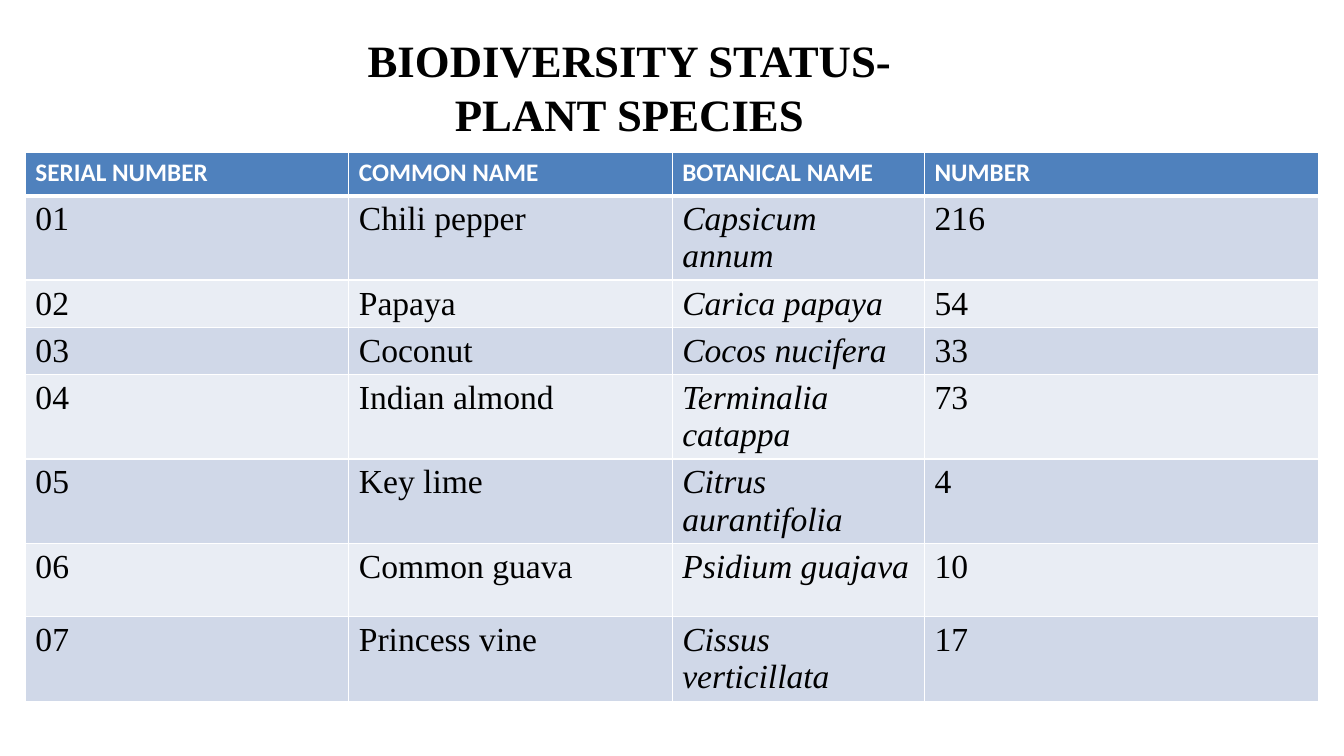
import pptx
import pptx.util
import pptx.dml.color
import pptx.enum.text
import pptx.oxml
import pptx.oxml.ns
from pptx.util import Cm

RGBColor = pptx.dml.color.RGBColor
WHITE = RGBColor(0xFF, 0xFF, 0xFF)
BLACK = RGBColor(0, 0, 0)
BLUE = RGBColor(0x4F, 0x81, 0xBD)
BANDS = (RGBColor(0xD0, 0xD8, 0xE8), RGBColor(0xE9, 0xED, 0xF4))

HEADS = ("SERIAL NUMBER", "COMMON NAME", "BOTANICAL NAME", "NUMBER")
PLANTS = (
    ("Chili pepper", "Capsicum annum", 216),
    ("Papaya", "Carica papaya", 54),
    ("Coconut", "Cocos nucifera", 33),
    ("Indian almond", "Terminalia catappa", 73),
    ("Key lime", "Citrus aurantifolia", 4),
    ("Common guava", "Psidium guajava", 10),
    ("Princess vine", "Cissus verticillata", 17),
)
WIDTHS = (8.15, 8.15, 6.36, 9.93)
HEIGHTS = (1.09, 1.85, 1.09, 1.09, 1.85, 1.85, 1.85, 1.85)
LATIN = 2  # column of botanical names


class Deck:
    serif = "Times New Roman"
    sans = "Calibri"

    def __init__(self):
        self.show = pptx.Presentation()
        self.show.slide_width = Cm(33.87)
        self.show.slide_height = Cm(19.05)
        self.slide = self.show.slides.add_slide(self.show.slide_layouts[5])

    def font(self, par, name, size, color, bold=False, italic=False):
        font = par.font
        font.name, font.size = name, pptx.util.Pt(size)
        font.bold, font.italic = bold, italic
        font.color.rgb = color

    def title(self, text, left, top, width, height):
        box = self.slide.shapes.title
        box.left, box.top = Cm(left), Cm(top)
        box.width, box.height = Cm(width), Cm(height)
        frame = box.text_frame
        frame.text = text
        frame.word_wrap = True
        frame.vertical_anchor = pptx.enum.text.MSO_ANCHOR.MIDDLE
        frame.margin_left = frame.margin_right = 0
        frame.margin_top = frame.margin_bottom = 0
        par = frame.paragraphs[0]
        par.alignment = pptx.enum.text.PP_ALIGN.CENTER
        par.space_before = pptx.util.Pt(1)
        self.font(par, self.serif, 32, BLACK, bold=True)

    def border(self, cell, **sides):
        """Draw white cell edges; sides map L, R, T, B to points."""
        props = cell._tc.get_or_add_tcPr()
        for side, size in sides.items():
            props.append(pptx.oxml.parse_xml(
                f'<a:ln{side} {pptx.oxml.ns.nsdecls("a")} w="{pptx.util.Pt(size)}">'
                f'<a:solidFill><a:srgbClr val="{WHITE}"/></a:solidFill></a:ln{side}>'))

    def table(self, rows, left, top):
        frame = self.slide.shapes.add_table(
            len(rows), len(WIDTHS), Cm(left), Cm(top),
            Cm(sum(WIDTHS)), Cm(sum(HEIGHTS)))
        grid = frame.table
        for col, width in zip(grid.columns, WIDTHS):
            col.width = Cm(width)
        for r, (row, height) in enumerate(zip(rows, HEIGHTS)):
            grid.rows[r].height = Cm(height)
            for c, text in enumerate(row):
                cell = grid.cell(r, c)
                cell.text = str(text)
                self.border(cell, L=1, R=1, T=3 if r == 1 else 1,
                            B=3 if r == 0 else 1)
                cell.fill.solid()
                par = cell.text_frame.paragraphs[0]
                if r == 0:
                    cell.fill.fore_color.rgb = BLUE
                    self.font(par, self.sans, 18, WHITE, bold=True)
                else:
                    cell.fill.fore_color.rgb = BANDS[(r - 1) % 2]
                    self.font(par, self.serif, 24, BLACK, italic=c == LATIN)


def main():
    deck = Deck()
    deck.title("BIODIVERSITY STATUS- PLANT SPECIES", 7.52, 0.79, 16.69, 2.77)
    rows = [(f"{n:02}", *plant) for n, plant in enumerate(PLANTS, 1)]
    deck.table([HEADS, *rows], 0.64, 3.84)
    deck.show.save("out.pptx")


if __name__ == "__main__":
    main()
